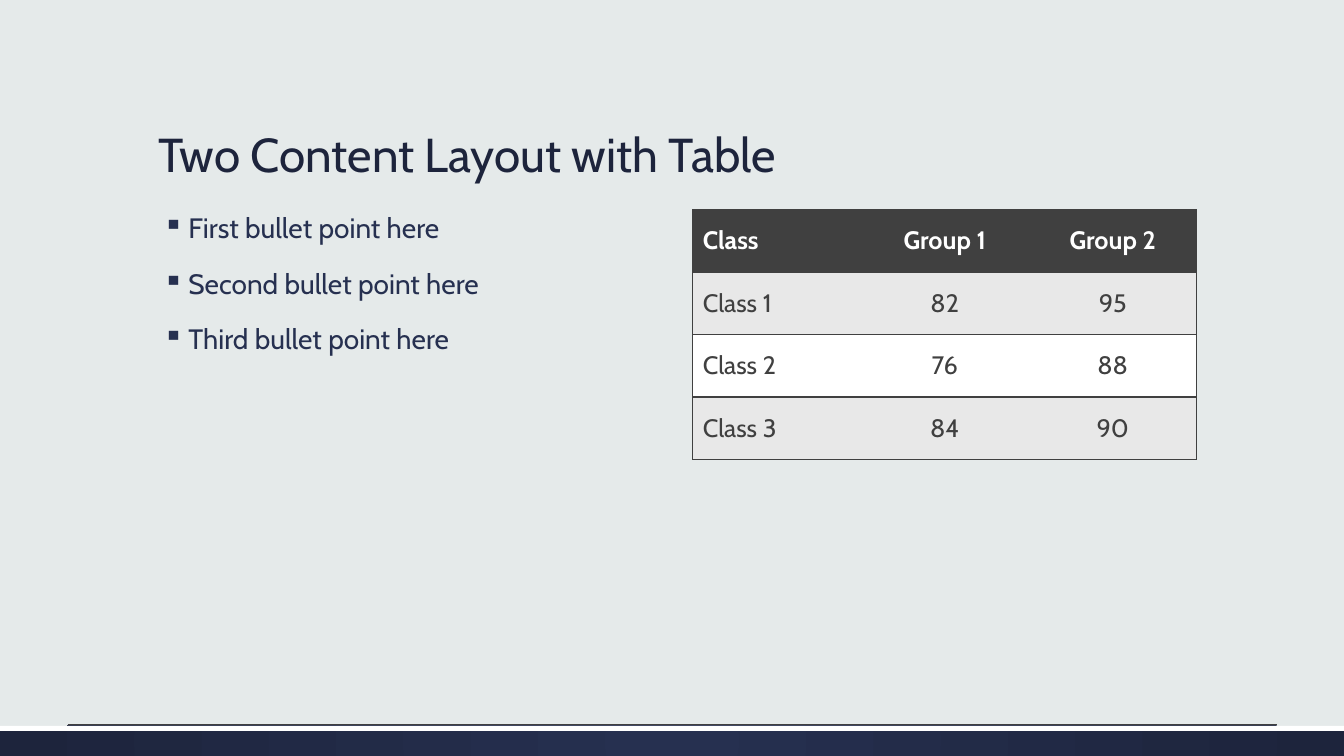
from lxml import etree
from pptx import Presentation
from pptx.dml.color import RGBColor
from pptx.enum.shapes import MSO_CONNECTOR, MSO_SHAPE
from pptx.enum.text import MSO_ANCHOR as ANCHOR, PP_ALIGN as ALIGN
from pptx.oxml.ns import qn
from pptx.util import Inches, Pt

FONT = "Cabin"
NAVY, DEEP_NAVY = "263050", "1D243C"
CHARCOAL, BAND, WHITE, PALE = "404040", "E8E8E8", "FFFFFF", "E5EAEA"

BULLETS = ["First bullet point here", "Second bullet point here", "Third bullet point here"]
SCORES = [
    ["Class", "Group 1", "Group 2"],
    ["Class 1", "82", "95"],
    ["Class 2", "76", "88"],
    ["Class 3", "84", "90"],
]


def color(value):
    return RGBColor.from_string(value)


def style_text(para, size, value, bold=False):
    for span in para.runs:
        span.font.name = FONT
        span.font.size = Pt(size)
        span.font.bold = bold
        span.font.color.rgb = color(value)


def add_bar(page, top, height):
    bar = page.shapes.add_shape(
        MSO_SHAPE.RECTANGLE, 0, Inches(top), Inches(13.33), Inches(height))
    bar.shadow.inherit = False
    bar.line.fill.background()
    return bar


def fill_radial(shape, center, edge):
    shape.fill.gradient()
    for stop, value in zip(shape.fill.gradient_stops, (center, edge)):
        stop.color.rgb = color(value)
    gradient = shape._element.spPr.find(qn("a:gradFill"))
    gradient.remove(gradient.find(qn("a:lin")))
    circle = etree.SubElement(gradient, qn("a:path"), path="circle")
    etree.SubElement(circle, qn("a:fillToRect"), l="50000", t="50000", r="50000", b="50000")


def add_rule(page, left, right, top):
    rule = page.shapes.add_connector(
        MSO_CONNECTOR.STRAIGHT, Inches(left), Inches(top), Inches(right), Inches(top))
    rule.line.color.rgb = color(CHARCOAL)
    rule.line.width = Pt(0.75)
    etree.SubElement(rule._element.spPr, qn("a:effectLst"))


def add_text_box(page, left, top, width, height, anchor):
    box = page.shapes.add_textbox(Inches(left), Inches(top), Inches(width), Inches(height))
    box.text_frame.word_wrap = True
    box.text_frame.vertical_anchor = anchor
    return box.text_frame


def add_title(page, text):
    frame = add_text_box(page, 1.47, 0.51, 10.4, 1.35, ANCHOR.BOTTOM)
    frame.text = text
    para = frame.paragraphs[0]
    para.line_spacing = 0.9
    style_text(para, 34, DEEP_NAVY)


def add_bullets(page, lines):
    frame = add_text_box(page, 1.47, 2.08, 5, 4.51, ANCHOR.TOP)
    frame.text = "\n".join(lines)
    for para in frame.paragraphs:
        para.line_spacing = 0.9
        para.space_before = Pt(18)
        style_text(para, 20, NAVY)
        props = para._p.get_or_add_pPr()
        props.set("marL", str(Inches(0.3)))
        props.set("indent", str(Inches(-0.25)))
        bullet_color = etree.SubElement(props, qn("a:buClr"))
        etree.SubElement(bullet_color, qn("a:srgbClr"), val=NAVY)
        etree.SubElement(props, qn("a:buChar"), char="▪")


def set_borders(cell, sides):
    props = cell._tc.get_or_add_tcPr()
    for side in "LRTB":
        line = etree.SubElement(props, qn(f"a:ln{side}"), w=str(Pt(1)))
        if side in sides:
            solid = etree.SubElement(line, qn("a:solidFill"))
            etree.SubElement(solid, qn("a:srgbClr"), val=CHARCOAL)
        else:
            etree.SubElement(line, qn("a:noFill"))


def add_score_table(page, rows):
    row_count, column_count = len(rows), len(rows[0])
    table = page.shapes.add_table(
        row_count, column_count, Inches(6.87), Inches(2.08), Inches(5), Inches(2.48)).table
    table.horz_banding = False
    for r, row in enumerate(rows):
        header = r == 0
        for c, text in enumerate(row):
            cell = table.cell(r, c)
            cell.text = text
            cell.vertical_anchor = ANCHOR.MIDDLE
            para = cell.text_frame.paragraphs[0]
            para.alignment = ALIGN.CENTER if c else ALIGN.LEFT
            style_text(para, 18, WHITE if header else CHARCOAL, bold=header)
            # Outer frame and row lines, no inner column lines
            sides = "TB" + ("L" if c == 0 else "") + ("R" if c == column_count - 1 else "")
            set_borders(cell, sides)
            cell.fill.solid()
            cell.fill.fore_color.rgb = color(CHARCOAL if header else BAND if r % 2 else WHITE)


def main():
    deck = Presentation()
    deck.slide_width, deck.slide_height = Inches(13.33), Inches(7.5)
    page = deck.slides.add_slide(deck.slide_layouts[6])
    page.background.fill.solid()
    page.background.fill.fore_color.rgb = color(PALE)

    # Footer band
    fill_radial(add_bar(page, 7.2, 0.3), NAVY, DEEP_NAVY)
    add_rule(page, 0.67, 12.67, 7.19)
    stripe = add_bar(page, 7.2, 0.05)
    stripe.fill.solid()
    stripe.fill.fore_color.rgb = color(WHITE)

    # Title and the two content columns
    add_title(page, "Two Content Layout with Table")
    add_bullets(page, BULLETS)
    add_score_table(page, SCORES)

    deck.save("out.pptx")


if __name__ == "__main__":
    main()
